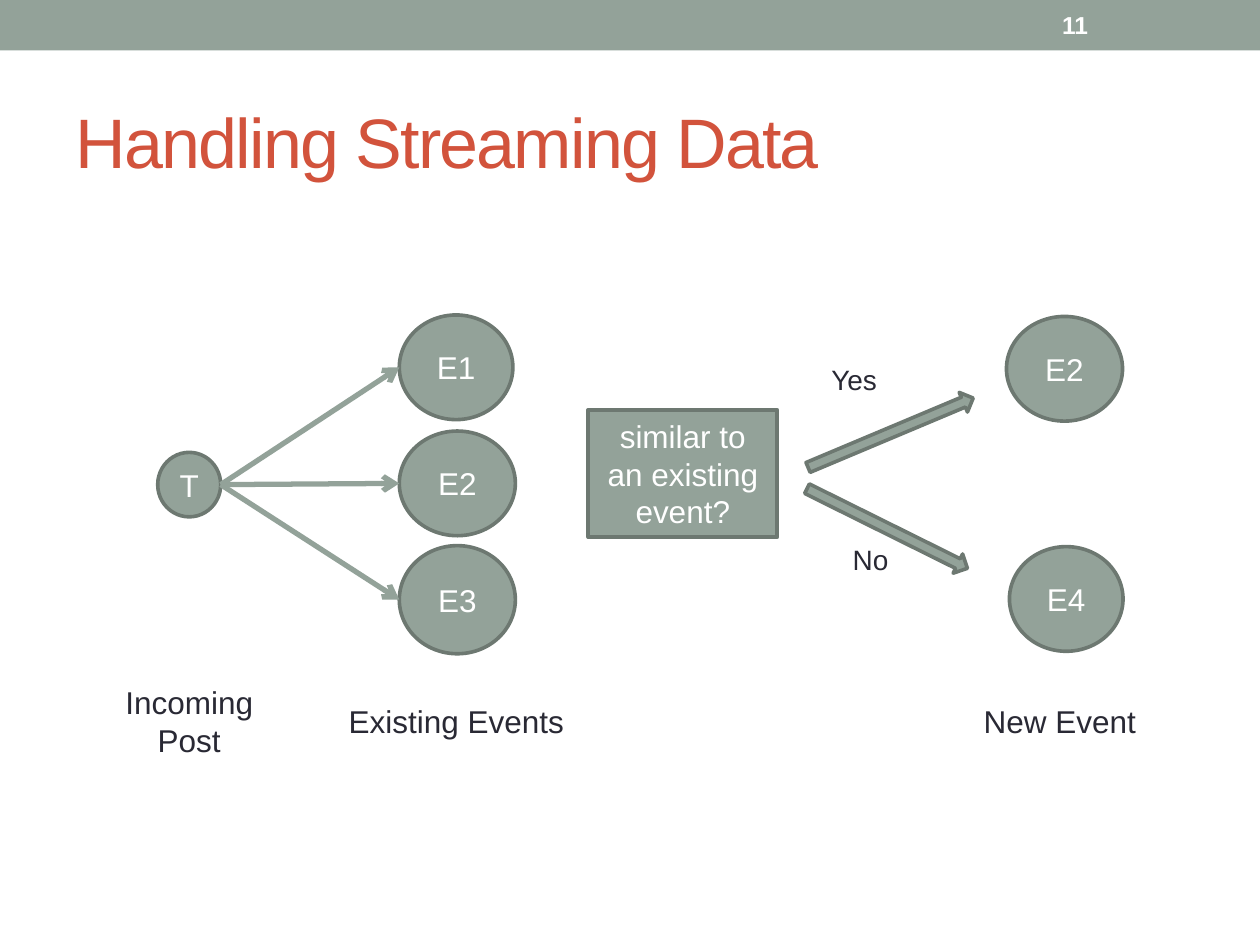
from dataclasses import dataclass

from lxml import etree
from pptx import Presentation
from pptx import util as u
from pptx.dml.color import RGBColor
from pptx.enum import shapes, text
from pptx.oxml.ns import qn

FONT = "Arial"
SAGE, EDGE, RED, INK, WHITE = "93A299", "6D7871", "D2533C", "292934", "FFFFFF"
KIND = shapes.MSO_SHAPE
LEFT, CENTER = text.PP_ALIGN.LEFT, text.PP_ALIGN.CENTER


@dataclass
class Box:
    """Position and size in centimetres."""
    left: float
    top: float
    width: float
    height: float

    def lengths(self) -> list:
        return [u.Cm(v) for v in (self.left, self.top, self.width, self.height)]


@dataclass
class Node:
    words: str
    box: Box
    kind: int = KIND.OVAL


@dataclass
class Label:
    words: str
    box: Box
    size: int = 18
    align: int = LEFT
    color: str = INK
    bold: bool = False
    anchor: int = text.MSO_ANCHOR.TOP


def rgb(value: str) -> RGBColor:
    return RGBColor.from_string(value)


def write(frame, words: str, size: int, color: str, align=CENTER,
          anchor=text.MSO_ANCHOR.MIDDLE, bold=False):
    frame.word_wrap = True
    frame.vertical_anchor = anchor
    para = frame.paragraphs[0]
    para.text = words
    para.alignment = align
    font = para.font
    font.name, font.size, font.bold = FONT, u.Pt(size), bold
    font.color.rgb = rgb(color)
    return para


def add_filled(page, kind, box: Box, outlined=True):
    shape = page.shapes.add_shape(kind, *box.lengths())
    shape.shadow.inherit = False
    shape.fill.solid()
    shape.fill.fore_color.rgb = rgb(SAGE)
    if outlined:
        shape.line.color.rgb = rgb(EDGE)
        shape.line.width = u.Pt(2.08)
    else:
        shape.line.fill.background()
    return shape


def add_node(page, node: Node):
    shape = add_filled(page, node.kind, node.box)
    write(shape.text_frame, node.words, 18, WHITE)
    return shape


def add_label(page, label: Label) -> None:
    box = page.shapes.add_textbox(*label.box.lengths())
    write(box.text_frame, label.words, label.size, label.color,
          label.align, label.anchor, label.bold)


def add_link(page, source, target) -> None:
    """Arrow from the right side of source to the left side of target."""
    line = page.shapes.add_connector(
        shapes.MSO_CONNECTOR.STRAIGHT,
        source.left + source.width, source.top + source.height // 2,
        target.left, target.top + target.height // 2)
    line.line.color.rgb = rgb(SAGE)
    line.line.width = u.Pt(3)
    etree.SubElement(line.line._get_or_add_ln(), qn("a:tailEnd"), type="arrow")
    etree.SubElement(line._element.spPr, qn("a:effectLst"))


POST = Node("T", Box(3.18, 9.12, 1.27, 1.3))
EVENTS = [
    Node("E1", Box(8.05, 6.35, 2.29, 2.11)),
    Node("E2", Box(8.05, 8.69, 2.34, 2.11)),
    Node("E3", Box(8.05, 11, 2.34, 2.18)),
]
OUTCOMES = [
    Node("similar to an existing event?", Box(11.86, 8.26, 3.81, 2.57), KIND.RECTANGLE),
    Node("E2", Box(20.29, 6.38, 2.34, 2.11)),
    Node("E4", Box(20.35, 11.02, 2.29, 2.11)),
]
BRANCHES = [(Box(16.15, 8.51, 3.61, 0.43), 337.2),
            (Box(16.08, 10.44, 3.61, 0.43), 26.4)]
LABELS = [
    Label("Incoming Post", Box(1.91, 13.64, 3.81, 1.8), align=CENTER),
    Label("Existing Events", Box(6.78, 14.02, 5.28, 1.02)),
    Label("New Event", Box(19.58, 14.02, 4.01, 1.02)),
    Label("Yes", Box(16.51, 7.19, 1.68, 0.94), 16),
    Label("No", Box(16.94, 10.82, 1.68, 0.94), 16),
    Label("11", Box(21.16, 0.05, 2.97, 0.91), 14, color=WHITE, bold=True,
          anchor=text.MSO_ANCHOR.MIDDLE),
]


def main() -> None:
    deck = Presentation()
    deck.slide_width, deck.slide_height = u.Cm(25.4), u.Cm(19.05)
    page = deck.slides.add_slide(deck.slide_layouts[5])

    # Top band and title
    add_filled(page, KIND.RECTANGLE, Box(0, 0, 25.4, 1.02), outlined=False)
    title = page.shapes.title
    title.left, title.top, title.width, title.height = Box(1.27, 1.47, 22.86, 2.74).lengths()
    para = write(title.text_frame, "Handling Streaming Data", 40, RED, LEFT)
    para.runs[0].font._element.set("spc", "-100")

    # Incoming post compared with each existing event
    post = add_node(page, POST)
    for event in EVENTS:
        add_link(page, post, add_node(page, event))

    # Decision and its outcomes
    for node in OUTCOMES:
        add_node(page, node)
    for box, angle in BRANCHES:
        add_filled(page, KIND.RIGHT_ARROW, box).rotation = angle

    # Captions and page number
    for label in LABELS:
        add_label(page, label)

    deck.save("out.pptx")


if __name__ == "__main__":
    main()
